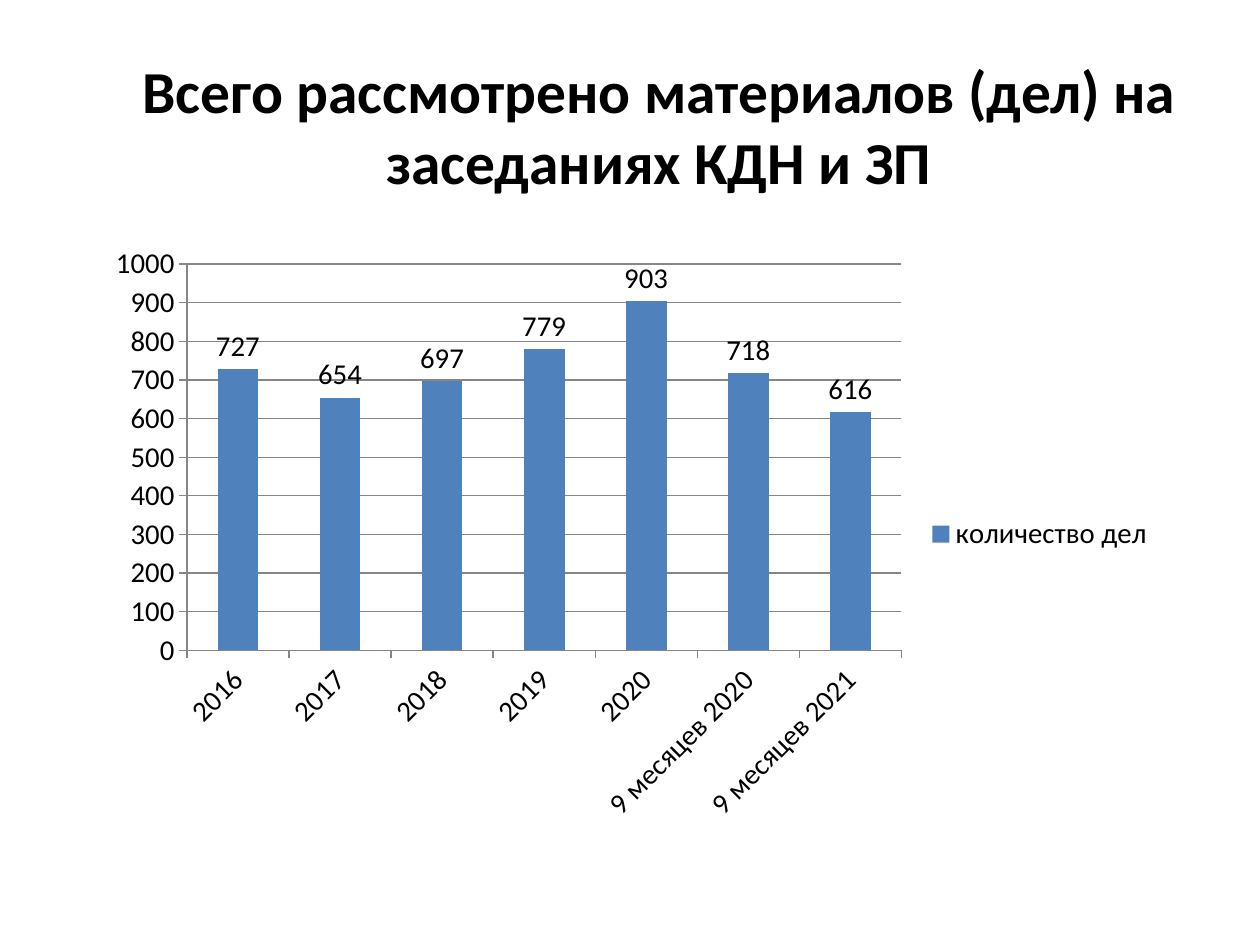
from pptx import Presentation
from pptx.chart.data import CategoryChartData
from pptx.dml.color import RGBColor
from pptx.enum.chart import (
    XL_CHART_TYPE as ChartType,
    XL_LABEL_POSITION as LabelPosition,
    XL_LEGEND_POSITION as LegendPosition,
    XL_TICK_MARK as TickMark,
)
from pptx.enum.text import MSO_ANCHOR as Anchor, PP_ALIGN as Align
from pptx.util import Inches, Pt

TITLE = "Всего рассмотрено материалов (дел) на заседаниях КДН и ЗП"
SERIES = "количество дел"
CASES = {
    "2016": 727,
    "2017": 654,
    "2018": 697,
    "2019": 779,
    "2020": 903,
    "9 месяцев 2020": 718,
    "9 месяцев 2021": 616,
}
BLACK, BLUE, GRAY = "000000", "4F81BD", "868686"


def color(hex_text):
    return RGBColor.from_string(hex_text)


def set_font(font, **values):
    for name, value in {"name": "Calibri", **values}.items():
        setattr(font, name, value)
    font.color.rgb = color(BLACK)


def place_title(page, box):
    title = page.shapes.title
    for name, length in zip(("left", "top", "width", "height"), box):
        setattr(title, name, Inches(length))
    frame = title.text_frame
    frame.text = TITLE
    frame.word_wrap = True
    frame.vertical_anchor = Anchor.BOTTOM
    para = frame.paragraphs[0]
    para.alignment = Align.CENTER
    set_font(para.runs[0].font, size=Pt(34), bold=True)


def format_axes(chart):
    for axis in (chart.category_axis, chart.value_axis):
        axis.major_tick_mark = TickMark.OUTSIDE
        axis.minor_tick_mark = TickMark.NONE
        axis.format.line.color.rgb = color(GRAY)
        set_font(axis.tick_labels.font, size=Pt(16.4))
    scale = {"minimum_scale": 0, "maximum_scale": 1000, "major_unit": 100}
    for name, value in scale.items():
        setattr(chart.value_axis, name, value)
    chart.value_axis.major_gridlines.format.line.color.rgb = color(GRAY)
    # Slant the category labels upwards by 45 degrees
    for body in chart.element.xpath("//c:catAx/c:txPr/a:bodyPr"):
        body.set("rot", str(-45 * 60000))


def place_chart(page, box):
    data = CategoryChartData()
    data.categories = list(CASES)
    data.add_series(SERIES, list(CASES.values()))
    chart = page.shapes.add_chart(
        ChartType.COLUMN_CLUSTERED, *map(Inches, box), data
    ).chart
    set_font(chart.font, size=Pt(16.4))
    chart.has_title = False
    chart.has_legend = True
    chart.legend.position = LegendPosition.RIGHT
    chart.legend.include_in_layout = False
    format_axes(chart)

    plot = chart.plots[0]
    plot.gap_width = 150
    plot.vary_by_categories = False
    columns = plot.series[0]
    columns.format.fill.solid()
    columns.format.fill.fore_color.rgb = color(BLUE)
    labels = columns.data_labels
    labels.show_value = True
    labels.position = LabelPosition.OUTSIDE_END
    set_font(labels.font, size=Pt(16.4))


def main():
    deck = Presentation()
    deck.slide_width, deck.slide_height = Inches(10), Inches(7.5)
    page = deck.slides.add_slide(deck.slide_layouts[5])
    place_title(page, (0.98, 0.36, 8.5, 1.25))
    place_chart(page, (0.75, 1.86, 8.51, 4.76))
    deck.save("out.pptx")


if __name__ == "__main__":
    main()
